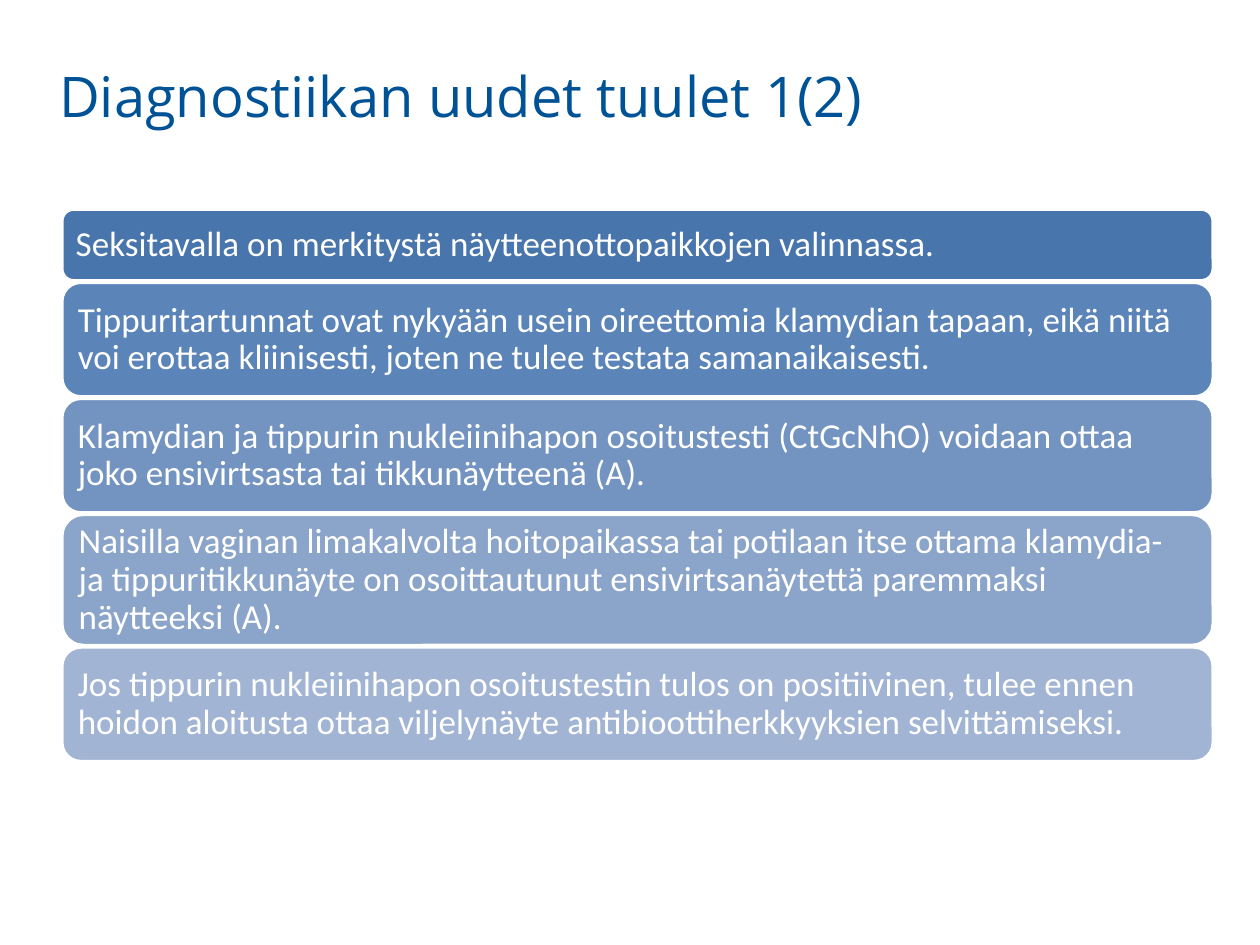
from pptx import Presentation
from pptx.dml.color import RGBColor
from pptx.enum import shapes, text
from pptx.util import Pt

# Content: bar text, bar height, fill colour name
TITLE = "Diagnostiikan uudet tuulet 1(2)"
BARS = [
    ("Seksitavalla on merkitystä näytteenottopaikkojen valinnassa.", 41, "bar1"),
    ("Tippuritartunnat ovat nykyään usein oireettomia klamydian tapaan, eikä niitä "
     "voi erottaa kliinisesti, joten ne tulee testata samanaikaisesti.", 65.5, "bar2"),
    ("Klamydian ja tippurin nukleiinihapon osoitustesti (CtGcNhO) voidaan ottaa "
     "joko ensivirtsasta tai tikkunäytteenä (A).", 65.5, "bar3"),
    ("Naisilla vaginan limakalvolta hoitopaikassa tai potilaan itse ottama klamydia-\v"
     "ja tippuritikkunäyte on osoittautunut ensivirtsanäytettä paremmaksi "
     "näytteeksi (A).", 75, "bar4"),
    ("Jos tippurin nukleiinihapon osoitustestin tulos on positiivinen, tulee ennen "
     "hoidon aloitusta ottaa viljelynäyte antibioottiherkkyyksien selvittämiseksi.",
     65.5, "bar5"),
]
COLORS = {"title": "005296", "white": "FFFFFF", "bar1": "4875AC", "bar2": "5B84B9",
          "bar3": "7393C1", "bar4": "8BA4CA", "bar5": "A2B4D4"}
LEFT, TOP, WIDTH, GAP, INSET = 35.3, 119.5, 658, 0.8, 6


def color(name):
    return RGBColor.from_string(COLORS[name])


def style(p, font, size, name):
    p.alignment = text.PP_ALIGN.LEFT
    for r in p.runs:
        r.font.name, r.font.size = font, Pt(size)
        r.font.color.rgb = color(name)


prs = Presentation()
prs.slide_width, prs.slide_height = Pt(720), Pt(540)
s = prs.slides.add_slide(prs.slide_layouts[5])

# Title
title = s.shapes.title
title.left, title.top, title.width, title.height = Pt(26.6), Pt(31.7), Pt(649.4), Pt(90.7)
tf = title.text_frame
tf.text = TITLE
tf.vertical_anchor = text.MSO_ANCHOR.TOP
style(tf.paragraphs[0], "Open Sans", 32, "title")

# Stacked bars
y = TOP
for words, height, fill in BARS:
    sp = s.shapes.add_shape(shapes.MSO_SHAPE.ROUNDED_RECTANGLE,
                            Pt(LEFT), Pt(y), Pt(WIDTH), Pt(height))
    sp.shadow.inherit = False
    sp.fill.solid()
    sp.fill.fore_color.rgb = color(fill)
    sp.line.color.rgb = color("white")
    sp.line.width = Pt(2)
    tf = sp.text_frame
    tf.word_wrap = True
    tf.vertical_anchor = text.MSO_ANCHOR.MIDDLE
    tf.margin_left = tf.margin_right = tf.margin_top = tf.margin_bottom = Pt(INSET)
    p = tf.paragraphs[0]
    p.text = words
    p.line_spacing = 0.9
    style(p, "Calibri", 20, "white")
    y += height + GAP

prs.save("out.pptx")
